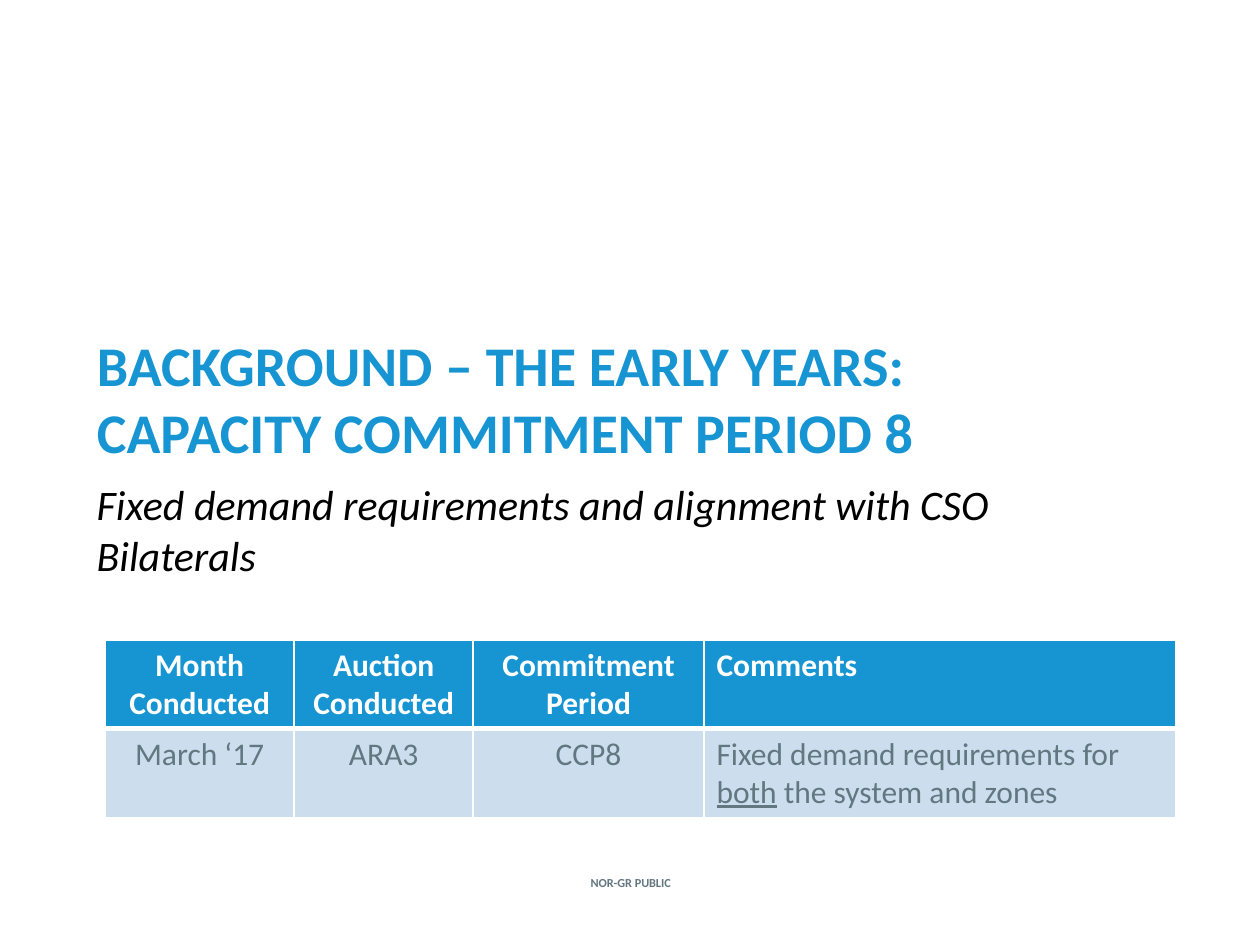
from lxml.etree import SubElement
from pptx import Presentation
from pptx.dml.color import RGBColor
from pptx.enum.text import MSO_ANCHOR, MSO_AUTO_SIZE, PP_ALIGN
from pptx.oxml.ns import qn
from pptx.util import Cm, Pt

COLORS = {
    "blue": "1795D2",
    "pale": "CCDDEE",
    "gray": "62777F",
    "white": "FFFFFF",
    "black": "000000",
}
TITLE = "BACKGROUND – THE EARLY YEARS:\nCAPACITY COMMITMENT PERIOD 8"
SUBTITLE = "Fixed demand requirements and alignment with CSO Bilaterals"
FOOTER = "NOR-GR PUBLIC"
ROWS = [
    ["Month Conducted", "Auction Conducted", "Commitment Period", "Comments"],
    [
        "March ‘17",
        "ARA3",
        "CCP8",
        ["Fixed demand requirements for ", ("both", True), " the system and zones"],
    ],
]
COLUMN_WIDTHS = [3.81, 3.61, 4.65, 9.52]
ROW_HEIGHT = 1.79
LEFT, WIDTH = 1.7, 21.59


def write_text(frame, text, size, color, bold=False, italic=False,
               align=PP_ALIGN.LEFT, anchor=MSO_ANCHOR.TOP):
    frame.word_wrap = True
    frame.vertical_anchor = anchor
    paragraph = frame.paragraphs[0]
    paragraph.alignment = align
    for part in [text] if isinstance(text, str) else text:
        words, underline = (part, False) if isinstance(part, str) else part
        for index, line in enumerate(words.split("\n")):
            if index:
                paragraph.add_line_break()
            run = paragraph.add_run()
            run.text = line
            font = run.font
            font.name, font.size = "Calibri", Pt(size)
            font.bold, font.italic = bold, italic
            if underline:
                font.underline = True
            font.color.rgb = RGBColor.from_string(COLORS[color])


def set_borders(cell, widths):
    properties = cell._tc.get_or_add_tcPr()
    for side, width in widths.items():
        line = SubElement(properties, qn(f"a:ln{side}"), w=str(Pt(width)))
        fill = SubElement(line, qn("a:solidFill"))
        SubElement(fill, qn("a:srgbClr"), val=COLORS["white"])


def add_title(slide):
    title = slide.shapes.title
    title.left, title.top = Cm(LEFT), Cm(5.72)
    title.width, title.height = Cm(WIDTH), Cm(3.78)
    title.text_frame.auto_size = MSO_AUTO_SIZE.NONE
    write_text(title.text_frame, TITLE, 32, "blue", bold=True, anchor=MSO_ANCHOR.BOTTOM)


def add_text_box(slide, text, left, top, width, height, margin=None, **text_format):
    frame = slide.shapes.add_textbox(Cm(left), Cm(top), Cm(width), Cm(height)).text_frame
    if margin is not None:
        frame.margin_left = frame.margin_right = Cm(margin)
        frame.margin_top = frame.margin_bottom = Cm(margin)
    write_text(frame, text, **text_format)


def add_auction_table(slide):
    table = slide.shapes.add_table(
        len(ROWS), len(COLUMN_WIDTHS), Cm(2.12), Cm(12.9),
        Cm(sum(COLUMN_WIDTHS)), Cm(ROW_HEIGHT * len(ROWS)),
    ).table
    for column, width in zip(table.columns, COLUMN_WIDTHS):
        column.width = Cm(width)
    for row_index, row in enumerate(ROWS):
        header = row_index == 0
        table.rows[row_index].height = Cm(ROW_HEIGHT)
        for column_index, text in enumerate(row):
            cell = table.cell(row_index, column_index)
            comments = column_index == len(row) - 1
            write_text(
                cell.text_frame, text, 18, "white" if header else "gray", bold=header,
                align=PP_ALIGN.LEFT if comments else PP_ALIGN.CENTER,
            )
            set_borders(cell, {"L": 1, "R": 1, "T": 1 if header else 3, "B": 3 if header else 1})
            cell.fill.solid()
            cell.fill.fore_color.rgb = RGBColor.from_string(COLORS["blue" if header else "pale"])


def main():
    presentation = Presentation()
    presentation.slide_width, presentation.slide_height = Cm(25.4), Cm(19.05)
    slide = presentation.slides.add_slide(presentation.slide_layouts[5])
    add_text_box(slide, FOOTER, 10.85, 17.58, 3.73, 0.43, margin=0, size=7, color="gray",
                 bold=True, align=PP_ALIGN.CENTER, anchor=MSO_ANCHOR.MIDDLE)
    add_title(slide)
    add_text_box(slide, SUBTITLE, LEFT, 9.53, WIDTH, 4.17, size=24, color="black", italic=True)
    add_auction_table(slide)
    presentation.save("out.pptx")


if __name__ == "__main__":
    main()
